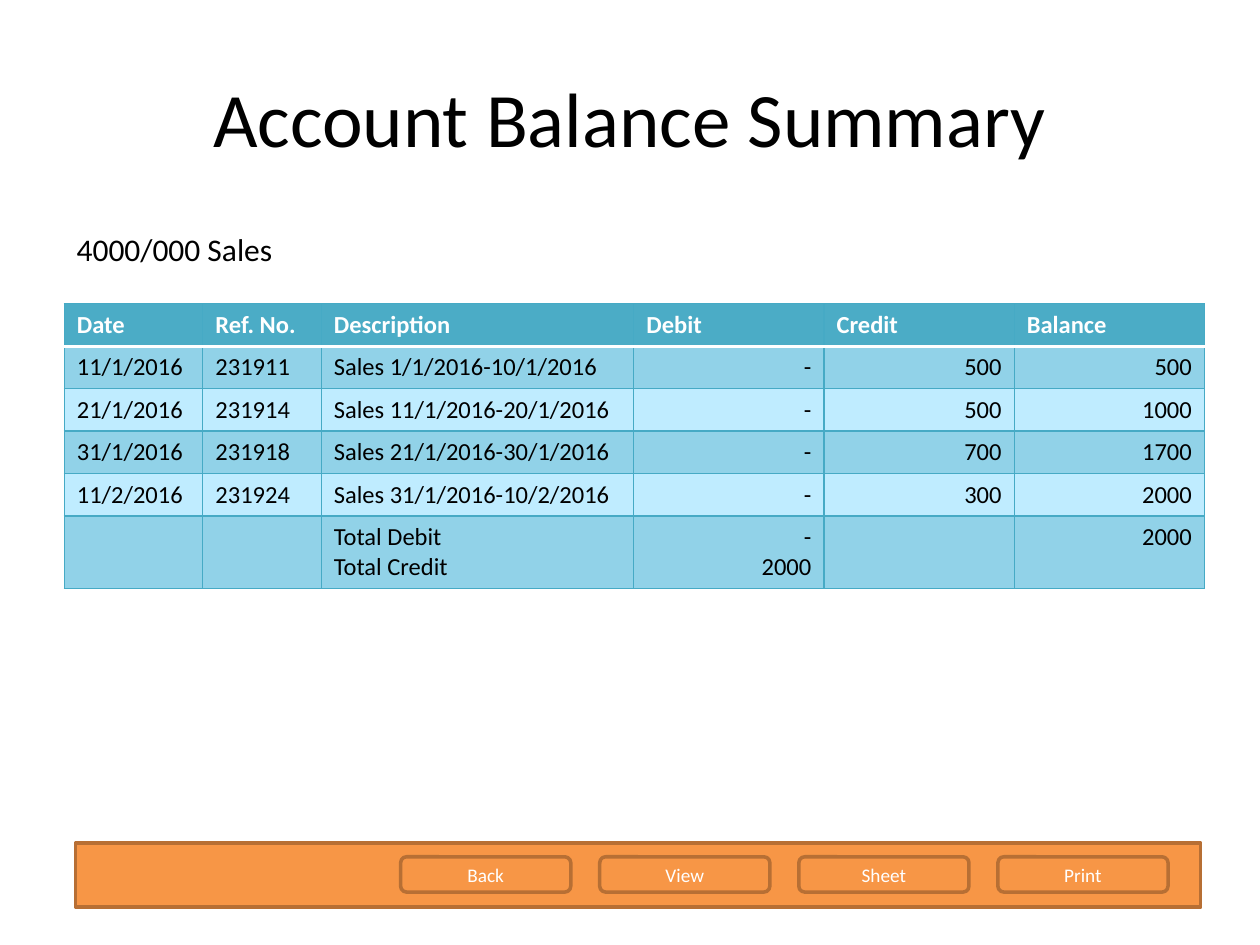
import pptx
import pptx.util
import pptx.dml.color
import pptx.enum.shapes
import pptx.enum.text
import pptx.oxml.ns
import lxml.etree

Inches, Pt = pptx.util.Inches, pptx.util.Pt
RGBColor = pptx.dml.color.RGBColor
PP_ALIGN = pptx.enum.text.PP_ALIGN
MSO_ANCHOR = pptx.enum.text.MSO_ANCHOR
MSO_SHAPE = pptx.enum.shapes.MSO_SHAPE
qn = pptx.oxml.ns.qn

BLACK = RGBColor(0x00, 0x00, 0x00)
WHITE = RGBColor(0xFF, 0xFF, 0xFF)
TEAL = RGBColor(0x4B, 0xAC, 0xC6)
TEAL_EDGE = RGBColor(0x46, 0xAA, 0xC5)
BAND_DARK = RGBColor(0x91, 0xD2, 0xE8)
BAND_LIGHT = RGBColor(0xBF, 0xEC, 0xFF)
ORANGE = RGBColor(0xF7, 0x96, 0x46)
ORANGE_EDGE = RGBColor(0xB7, 0x6F, 0x34)


def format_text(tf, size, color, align=PP_ALIGN.LEFT, bold=False):
    for p in tf.paragraphs:
        p.alignment = align
        for r in p.runs:
            r.font.name = "Calibri"
            r.font.size = Pt(size)
            r.font.bold = bold
            r.font.color.rgb = color


def add_box(kind, left, top, width, height):
    sp = s.shapes.add_shape(kind, left, top, width, height)
    sp.shadow.inherit = False
    sp.fill.solid()
    sp.fill.fore_color.rgb = ORANGE
    sp.line.color.rgb = ORANGE_EDGE
    sp.line.width = Pt(2)
    return sp


prs = pptx.Presentation()
prs.slide_width, prs.slide_height = Inches(10), Inches(7.5)
s = prs.slides.add_slide(prs.slide_layouts[5])

title = s.shapes.title
title.left, title.top = Inches(0.5), Inches(0.3)
title.width, title.height = Inches(9), Inches(1.25)
title.text_frame.text = "Account Balance Summary"
title.text_frame.vertical_anchor = MSO_ANCHOR.MIDDLE
format_text(title.text_frame, 44, BLACK, PP_ALIGN.CENTER)

rows = [
    ["Date", "Ref. No.", "Description", "Debit", "Credit", "Balance"],
    ["11/1/2016", "231911", "Sales 1/1/2016-10/1/2016", "-", "500", "500"],
    ["21/1/2016", "231914", "Sales 11/1/2016-20/1/2016", "-", "500", "1000"],
    ["31/1/2016", "231918", "Sales 21/1/2016-30/1/2016", "-", "700", "1700"],
    ["11/2/2016", "231924", "Sales 31/1/2016-10/2/2016", "-", "300", "2000"],
    ["", "", "Total Debit\nTotal Credit", "-\n2000", "", "2000"],
]
col_widths = [1.1, 0.94, 2.48, 1.51, 1.51, 1.51]
row_heights = [0.33] * 5 + [0.57]
margin = Inches(0.51)
table = s.shapes.add_table(
    len(rows), len(col_widths), margin, Inches(2.41),
    Inches(sum(col_widths)), Inches(sum(row_heights))).table
for column, width in zip(table.columns, col_widths):
    column.width = Inches(width)
for row, height in zip(table.rows, row_heights):
    row.height = Inches(height)

for i, values in enumerate(rows):
    header = i == 0
    for j, value in enumerate(values):
        cell = table.cell(i, j)
        cell.text_frame.text = value
        align = PP_ALIGN.RIGHT if j > 2 and not header else PP_ALIGN.LEFT
        format_text(cell.text_frame, 14, WHITE if header else BLACK, align, header)
        tcPr = cell._tc.get_or_add_tcPr()
        for side in "LRTB":
            divider = (i, side) in ((0, "B"), (1, "T"))
            ln = lxml.etree.SubElement(tcPr, qn("a:ln" + side))
            ln.set("w", str(Pt(2 if divider else 0.75)))
            fill = lxml.etree.SubElement(ln, qn("a:solidFill"))
            clr = lxml.etree.SubElement(fill, qn("a:srgbClr"))
            clr.set("val", str(WHITE if divider else TEAL_EDGE))
        cell.fill.solid()
        cell.fill.fore_color.rgb = TEAL if header else (BAND_LIGHT, BAND_DARK)[i % 2]

account = s.shapes.add_textbox(margin, Inches(1.78), Inches(4.02), Inches(0.4))
account.text_frame.word_wrap = True
account.text_frame.text = "4000/000 Sales"
format_text(account.text_frame, 18, BLACK)

add_box(MSO_SHAPE.RECTANGLE, Inches(0.6), Inches(6.69), Inches(8.93), Inches(0.51))
for i, label in enumerate(["Back", "View", "Sheet", "Print"]):
    button = add_box(MSO_SHAPE.ROUNDED_RECTANGLE, Inches(3.18 + 1.58 * i),
                     Inches(6.8), Inches(1.35), Inches(0.28))
    button.text_frame.text = label
    button.text_frame.vertical_anchor = MSO_ANCHOR.MIDDLE
    format_text(button.text_frame, 11, WHITE, PP_ALIGN.CENTER)

prs.save("out.pptx")
